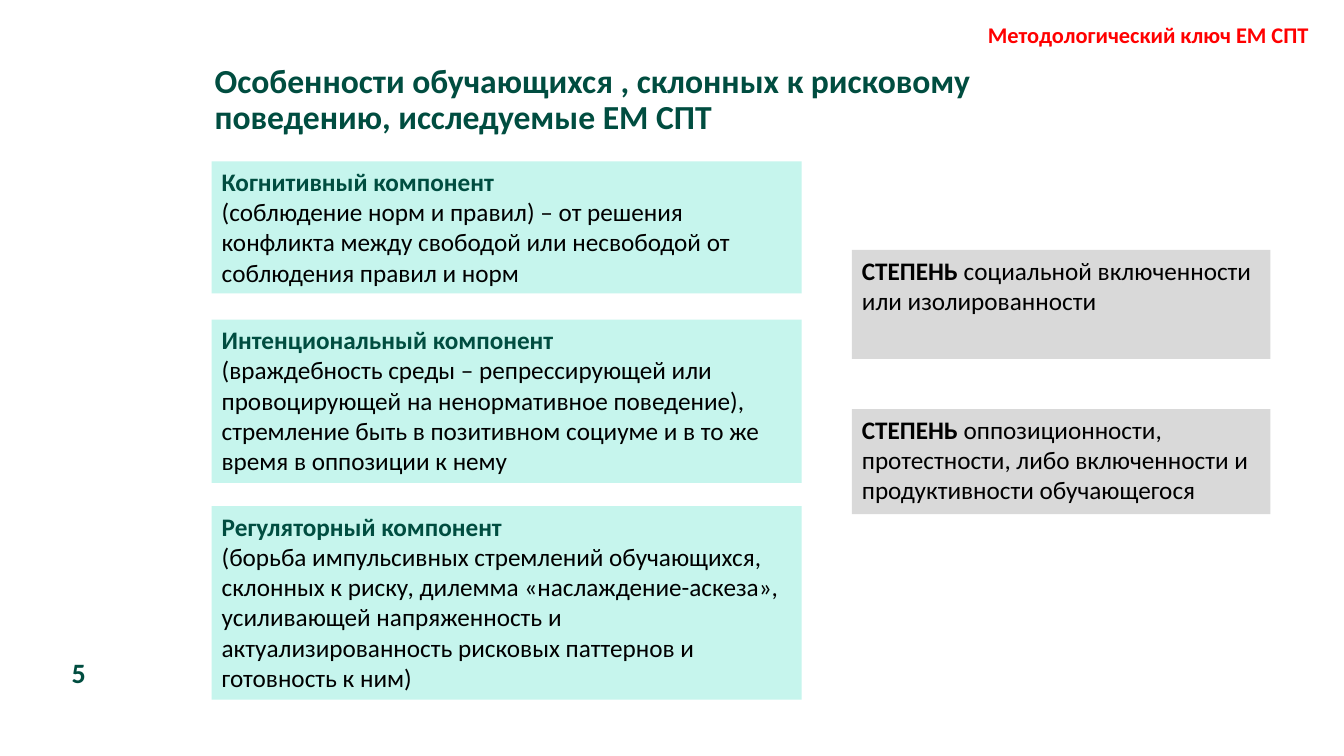
from pptx import Presentation
from pptx.dml.color import RGBColor
from pptx.enum import text
from pptx.util import Inches, Pt

GREEN = RGBColor(0x00, 0x4D, 0x40)
MINT = RGBColor(0xC6, 0xF5, 0xED)
GREY = RGBColor(0xD9, 0xD9, 0xD9)
BLACK = RGBColor(0, 0, 0)
RED = RGBColor(0xFF, 0, 0)

prs = Presentation()
prs.slide_width, prs.slide_height = Inches(13.33), Inches(7.5)
s = prs.slides.add_slide(prs.slide_layouts[6])


def add_box(left, top, width, height, fill=None):
    sp = s.shapes.add_textbox(Inches(left), Inches(top), Inches(width), Inches(height))
    sp.text_frame.word_wrap = True
    if fill is not None:
        sp.fill.solid()
        sp.fill.fore_color.rgb = fill
    return sp.text_frame


def add_run(p, words, size, color, bold=True):
    r = p.add_run()
    r.text = words
    r.font.name = "Calibri"
    r.font.size = Pt(size)
    r.font.bold = bold
    r.font.color.rgb = color


title = add_box(2.03, 0.52, 8.8, 0.95)
title.vertical_anchor = text.MSO_ANCHOR.MIDDLE
title.paragraphs[0].line_spacing = 0.9
add_run(title.paragraphs[0],
        "Особенности обучающихся , склонных к рисковому поведению, исследуемые ЕМ СПТ",
        24, GREEN)

header = add_box(9.7, 0.16, 3.41, 0.37)
header.word_wrap = False
add_run(header.paragraphs[0], "Методологический ключ ЕМ СПТ", 16, RED)

components = [
    (1.6, 1.31, "Когнитивный компонент",
     "(соблюдение норм и правил) – от решения конфликта между свободой или "
     "несвободой от соблюдения правил и норм"),
    (3.17, 1.62, "Интенциональный компонент",
     "(враждебность среды – репрессирующей или провоцирующей на ненормативное "
     "поведение), стремление быть в позитивном социуме и в то же время в оппозиции к нему"),
    (5.02, 1.92, "Регуляторный компонент",
     "(борьба импульсивных стремлений обучающихся, склонных к риску, дилемма "
     "«наслаждение-аскеза», усиливающей напряженность и актуализированность "
     "рисковых паттернов и готовность к ним)"),
]
for top, height, name, description in components:
    tf = add_box(2.1, top, 5.85, height, MINT)
    add_run(tf.paragraphs[0], name, 18, GREEN)
    add_run(tf.add_paragraph(), description, 18, BLACK, bold=False)

degrees = [
    (2.48, 1.08, " социальной включенности или изолированности"),
    (4.06, 1.04, " оппозиционности, протестности, либо включенности и "
                 "продуктивности обучающегося"),
]
for top, height, description in degrees:
    p = add_box(8.45, top, 4.15, height, GREY).paragraphs[0]
    add_run(p, "СТЕПЕНЬ", 18, BLACK)
    add_run(p, description, 18, BLACK, bold=False)

number = add_box(0.67, 6.5, 0.42, 0.34)
number.margin_left = Inches(0.04)
number.margin_top = number.margin_right = number.margin_bottom = 0
add_run(number.paragraphs[0], "5", 20, GREEN)

prs.save("out.pptx")
